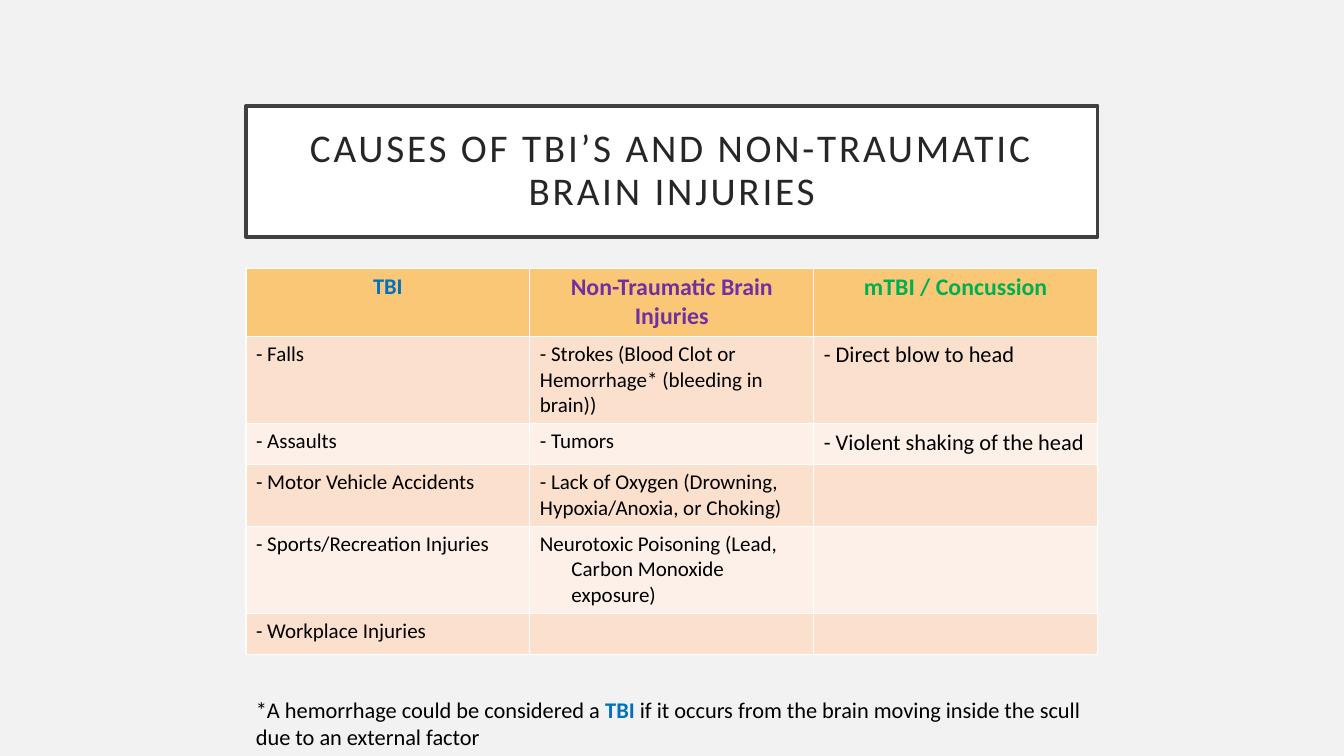
from dataclasses import dataclass

from pptx import Presentation
from pptx.dml.color import RGBColor
from pptx.enum.text import MSO_ANCHOR, MSO_AUTO_SIZE, PP_ALIGN
from pptx.util import Pt

CENTER, LEFT = PP_ALIGN.CENTER, PP_ALIGN.LEFT
MIDDLE = MSO_ANCHOR.MIDDLE
NO_FIT, GROW = MSO_AUTO_SIZE.NONE, MSO_AUTO_SIZE.SHAPE_TO_FIT_TEXT

BACKGROUND = RGBColor(0xF2, 0xF2, 0xF2)
WHITE = RGBColor(0xFF, 0xFF, 0xFF)
BLACK = RGBColor(0, 0, 0)
FRAME = RGBColor(0x40, 0x40, 0x40)
TITLE_TEXT = RGBColor(0x26, 0x26, 0x26)
BLUE = RGBColor(0x00, 0x70, 0xC0)
PURPLE = RGBColor(0x70, 0x30, 0xA0)
GREEN = RGBColor(0x00, 0xB0, 0x50)
HEADER_FILL = RGBColor(0xFA, 0xC7, 0x77)
BANDS = (RGBColor(0xFB, 0xE0, 0xCD), RGBColor(0xFD, 0xF0, 0xE8))

FONT = "Calibri"
LEFT_EDGE, CONTENT_WIDTH = 175.7, 608.4
ROW_HEIGHT = 29.3


@dataclass
class Column:
    heading: str
    color: RGBColor
    heading_size: float
    body_size: float
    causes: list[str]


COLUMNS = [
    Column("TBI", BLUE, 16, 15, [
        "- Falls", "- Assaults", "- Motor Vehicle Accidents",
        "- Sports/Recreation Injuries", "- Workplace Injuries"]),
    Column("Non-Traumatic Brain Injuries", PURPLE, 17, 15, [
        "- Strokes (Blood Clot or Hemorrhage* (bleeding in brain))",
        "- Tumors",
        "- Lack of Oxygen (Drowning, Hypoxia/Anoxia, or Choking)",
        "Neurotoxic Poisoning (Lead, Carbon Monoxide exposure)"]),
    Column("mTBI / Concussion", GREEN, 17, 16, [
        "- Direct blow to head", "- Violent shaking of the head"]),
]


def add_text(p, text: str, *, size: float = 16, color: RGBColor = BLACK,
             bold: bool = False, align=LEFT, spacing: float = 0,
             hanging: float = 0) -> None:
    """Append a formatted run; spacing and hanging are in points."""
    p.alignment = align
    if hanging:
        pPr = p._p.get_or_add_pPr()
        pPr.set("marL", str(Pt(hanging)))
        pPr.set("indent", str(-Pt(hanging)))
    r = p.add_run()
    r.text = text
    r.font.name = FONT
    r.font.size = Pt(size)
    r.font.bold = bold
    r.font.color.rgb = color
    if spacing:
        r._r.get_or_add_rPr().set("spc", str(round(spacing * 100)))


def format_title(sp) -> None:
    sp.left, sp.top = Pt(LEFT_EDGE), Pt(75.6)
    sp.width, sp.height = Pt(CONTENT_WIDTH), Pt(93.6)
    sp.fill.solid()
    sp.fill.fore_color.rgb = WHITE
    sp.line.color.rgb = FRAME
    sp.line.width = Pt(2.5)
    tf = sp.text_frame
    tf.auto_size = NO_FIT
    tf.word_wrap = True
    tf.vertical_anchor = MIDDLE
    tf.margin_left = tf.margin_right = Pt(14.4)
    tf.margin_top = tf.margin_bottom = Pt(14.4)
    p = tf.paragraphs[0]
    p.line_spacing = 0.9
    add_text(p, "CAUSES OF TBI’S AND NON-TRAUMATIC BRAIN INJURIES",
             size=28, color=TITLE_TEXT, align=CENTER, spacing=2)


def add_causes_table(slide) -> None:
    row_count = 1 + max(len(column.causes) for column in COLUMNS)
    table = slide.shapes.add_table(
        row_count, len(COLUMNS), Pt(LEFT_EDGE), Pt(191.5),
        Pt(CONTENT_WIDTH), Pt(ROW_HEIGHT * row_count)).table
    for c, column in enumerate(COLUMNS):
        table.columns[c].width = Pt(CONTENT_WIDTH / len(COLUMNS))
        for r in range(row_count):
            cell = table.cell(r, c)
            cell.fill.solid()
            cell.fill.fore_color.rgb = BANDS[(r - 1) % 2] if r else HEADER_FILL
            p = cell.text_frame.paragraphs[0]
            if r == 0:
                add_text(p, column.heading, size=column.heading_size,
                         color=column.color, bold=True, align=CENTER)
            elif r <= len(column.causes):
                cause = column.causes[r - 1]
                add_text(p, cause, size=column.body_size,
                         hanging=0 if cause.startswith("-") else 22.5)


def add_footnote(slide) -> None:
    tf = slide.shapes.add_textbox(
        Pt(LEFT_EDGE), Pt(493.9), Pt(630.7), Pt(46.1)).text_frame
    tf.word_wrap = True
    tf.auto_size = GROW
    p = tf.paragraphs[0]
    add_text(p, "*A hemorrhage could be considered a ")
    add_text(p, "TBI ", color=BLUE, bold=True)
    add_text(p, "if it occurs from the brain moving inside the scull "
                "due to an external factor")


def main() -> None:
    prs = Presentation()
    prs.slide_width, prs.slide_height = Pt(960), Pt(540)
    slide = prs.slides.add_slide(prs.slide_layouts.get_by_name("Title Only"))
    slide.background.fill.solid()
    slide.background.fill.fore_color.rgb = BACKGROUND
    format_title(slide.shapes.title)
    add_causes_table(slide)
    add_footnote(slide)
    prs.save("out.pptx")


if __name__ == "__main__":
    main()
